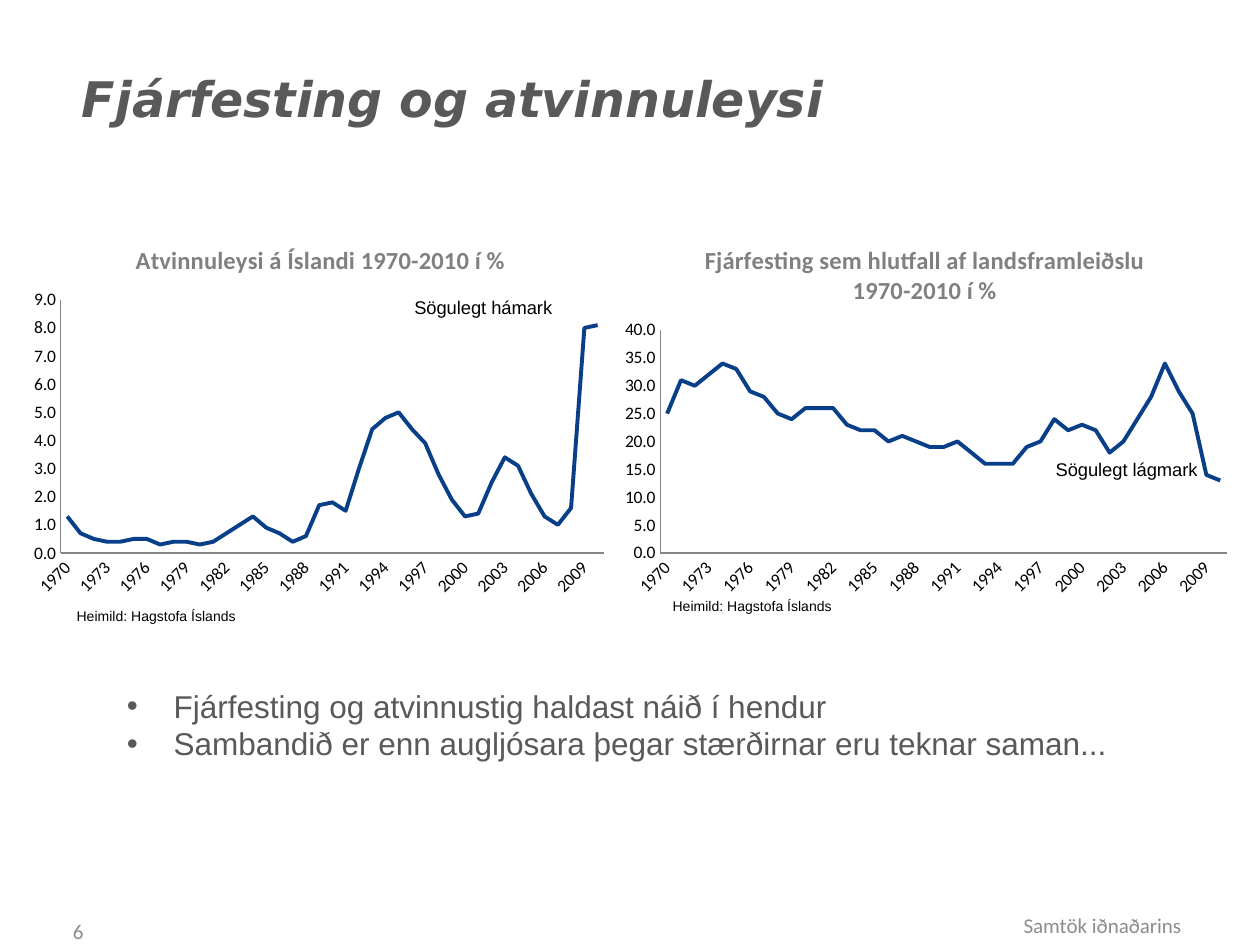
from dataclasses import dataclass

from lxml import etree
from pptx import Presentation
from pptx import util as u
from pptx.chart.data import CategoryChartData
from pptx.dml.color import RGBColor
from pptx.enum import chart as ch
from pptx.enum import text
from pptx.oxml import parse_xml
from pptx.oxml.ns import nsdecls, qn

Inches = u.Inches


@dataclass(frozen=True)
class Theme:
    heading: str = "595959"
    chart_title: str = "808080"
    muted: str = "8C8C8C"
    ink: str = "000000"
    series: str = "093F88"
    axis: str = "868686"
    title_font: str = "DejaVu Sans"
    body_font: str = "Arial"
    chart_font: str = "Calibri"
    title_size: float = 28
    body_size: float = 18
    chart_title_size: float = 14
    footer_size: float = 12
    label_size: float = 10.5
    axis_size: float = 10
    source_size: float = 8


T = Theme()
YEARS = [str(y) for y in range(1970, 2011)]
UNEMPLOYMENT = [
    1.3, 0.7, 0.5, 0.4, 0.4, 0.5, 0.5, 0.3, 0.4, 0.4, 0.3, 0.4, 0.7, 1,
    1.3, 0.9, 0.7, 0.4, 0.6, 1.7, 1.8, 1.5, 3, 4.4, 4.8, 5, 4.4, 3.9,
    2.8, 1.9, 1.3, 1.4, 2.5, 3.4, 3.1, 2.1, 1.3, 1, 1.6, 8, 8.1]
INVESTMENT = [
    25, 31, 30, 32, 34, 33, 29, 28, 25, 24, 26, 26, 26, 23,
    22, 22, 20, 21, 20, 19, 19, 20, 18, 16, 16, 16, 19, 20,
    24, 22, 23, 22, 18, 20, 24, 28, 34, 29, 25, 14, 13]


def format_font(font, name, size, color, bold=False, italic=False):
    font.name = name
    font.size = u.Pt(size)
    font.color.rgb = RGBColor.from_string(color)
    font.bold = bold
    font.italic = italic


def add_text(s, box, lines, size, color, font=T.body_font, align=None,
             anchor=text.MSO_ANCHOR.TOP, bullet_indent=None):
    tf = s.shapes.add_textbox(*map(Inches, box)).text_frame
    tf.word_wrap = True
    tf.vertical_anchor = anchor
    for i, line in enumerate(lines):
        p = tf.add_paragraph() if i else tf.paragraphs[0]
        p.alignment = align
        if bullet_indent:
            pPr = p._p.get_or_add_pPr()
            indent = Inches(bullet_indent)
            pPr.set("marL", str(indent))
            pPr.set("indent", str(-indent))
            etree.SubElement(pPr, qn("a:buFont")).set("typeface", T.body_font)
            etree.SubElement(pPr, qn("a:buChar")).set("char", "•")
        r = p.add_run()
        r.text = line
        format_font(r.font, font, size, color)


def add_title(s, box, words):
    sp = s.shapes.title
    sp.left, sp.top, sp.width, sp.height = map(Inches, box)
    tf = sp.text_frame
    tf.word_wrap = True
    tf.vertical_anchor = text.MSO_ANCHOR.MIDDLE
    p = tf.paragraphs[0]
    p.alignment = text.PP_ALIGN.LEFT
    r = p.add_run()
    r.text = words
    format_font(r.font, T.title_font, T.title_size, T.heading, True, True)


def set_plot_area(chart, fractions):
    parts = "".join(f'<c:{k} val="{v}"/>' for k, v in zip("xywh", fractions))
    layout = parse_xml(
        f'<c:layout {nsdecls("c")}><c:manualLayout>'
        '<c:layoutTarget val="inner"/><c:xMode val="edge"/>'
        f'<c:yMode val="edge"/>{parts}</c:manualLayout></c:layout>')
    area = chart._chartSpace.chart.plotArea
    for old in area.findall(qn("c:layout")):
        area.remove(old)
    area.insert(0, layout)


def format_axis(axis):
    axis.has_major_gridlines = False
    axis.major_tick_mark = axis.minor_tick_mark = ch.XL_TICK_MARK.NONE
    axis.format.line.color.rgb = RGBColor.from_string(T.axis)
    axis.format.line.width = u.Pt(0.75)
    format_font(axis.tick_labels.font, T.chart_font, T.axis_size, T.ink)


def add_line_chart(s, box, title, values, top, step, plot):
    data = CategoryChartData(number_format="0.0")
    data.categories = YEARS
    data.add_series("Series 1", values)
    chart = s.shapes.add_chart(
        ch.XL_CHART_TYPE.LINE, *map(Inches, box), data).chart
    chart.has_legend = False
    format_font(chart.font, T.chart_font, T.axis_size, T.ink)
    chart.has_title = True
    chart.chart_title.include_in_layout = False
    r = chart.chart_title.text_frame.paragraphs[0].add_run()
    r.text = title
    format_font(r.font, T.chart_font, T.chart_title_size, T.chart_title, True)

    chart.plots[0].vary_by_categories = False
    series = chart.plots[0].series[0]
    series.smooth = False
    series.marker.style = ch.XL_MARKER_STYLE.NONE
    series.format.line.color.rgb = RGBColor.from_string(T.series)
    series.format.line.width = u.Pt(2.25)

    years, scale = chart.category_axis, chart.value_axis
    for axis in (years, scale):
        format_axis(axis)
    scale.minimum_scale, scale.maximum_scale, scale.major_unit = 0, top, step
    scale.tick_labels.number_format = "0.0"
    scale.tick_labels.number_format_is_linked = False
    years._element.find(qn("c:txPr")).find(qn("a:bodyPr")).set("rot", "-2700000")
    skip = parse_xml(f'<c:tickLblSkip {nsdecls("c")} val="3"/>')
    years._element.find(qn("c:noMultiLvlLbl")).addprevious(skip)
    set_plot_area(chart, plot)


def add_chart_panel(s, box, title, values, top, step, plot, note, note_at, source_at):
    left, y = box[:2]
    add_line_chart(s, box, title, values, top, step, plot)
    add_text(s, (left + note_at[0], y + note_at[1], 1.5, 0.29), [note],
             T.label_size, T.ink)
    add_text(s, (left + source_at[0], y + source_at[1], 1.5, 0.24),
             ["Heimild: Hagstofa Íslands"], T.source_size, T.ink)


def add_footer(s, box):
    left, top, width, height = box
    style = dict(size=T.footer_size, color=T.muted, font=T.chart_font,
                 anchor=text.MSO_ANCHOR.MIDDLE)
    add_text(s, (left, top, 0.93, 0.4), ["6"], **style)
    add_text(s, (left + width - 2.5, top, 2.5, height), ["Samtök iðnaðarins"],
             align=text.PP_ALIGN.CENTER, **style)


def main():
    prs = Presentation()
    prs.slide_width, prs.slide_height = Inches(10), Inches(7.5)
    s = prs.slides.add_slide(prs.slide_layouts[5])
    add_title(s, (0.55, 0.31, 8.13, 0.94), "Fjárfesting og atvinnuleysi")
    add_chart_panel(s, (0.2, 1.78, 4.69, 3), "Atvinnuleysi á Íslandi 1970-2010 í %",
                    UNEMPLOYMENT, 9, 1, (0.06, 0.2, 0.92, 0.67),
                    "Sögulegt hámark", (2.99, 0.52), (0.31, 2.99))
    add_chart_panel(s, (4.84, 1.78, 5, 3),
                    "Fjárfesting sem hlutfall af landsframleiðslu 1970-2010 í %",
                    INVESTMENT, 40, 5, (0.08, 0.28, 0.9, 0.59),
                    "Sögulegt lágmark", (3.44, 1.81), (0.4, 2.91))
    add_text(s, (0.91, 5.4, 8.27, 0.71),
             ["Fjárfesting og atvinnustig haldast náið í hendur",
              "Sambandið er enn augljósara þegar stærðirnar eru teknar saman..."],
             T.body_size, T.heading, bullet_indent=0.37)
    add_footer(s, (0.48, 7.19, 9.52, 0.31))
    prs.save("out.pptx")


if __name__ == "__main__":
    main()
